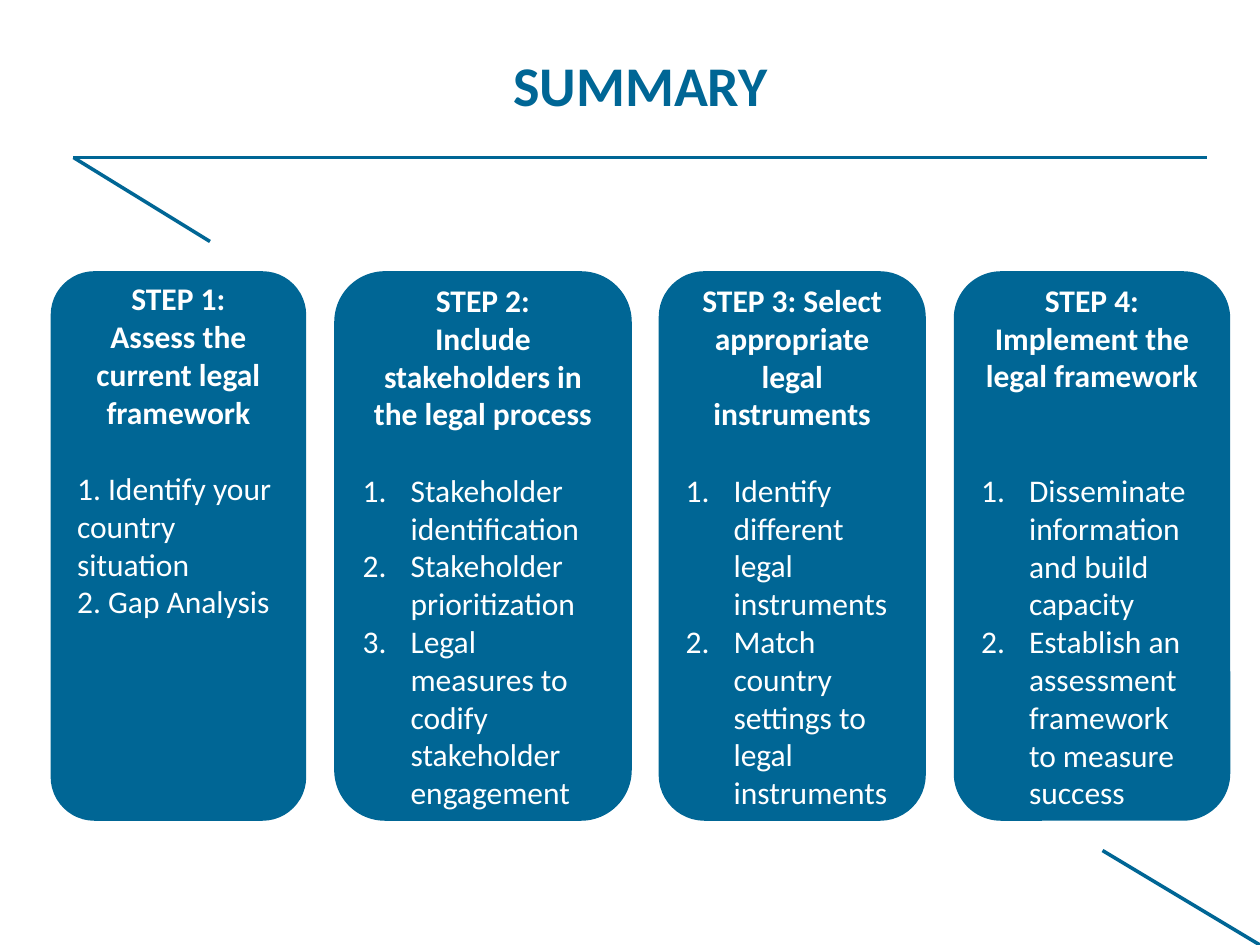
from dataclasses import dataclass

from pptx import Presentation, util as u
from pptx.dml.color import RGBColor
from pptx.enum import shapes, text
from pptx.oxml.ns import qn

COLUMNS, ROWS = 120, 90
SLIDE_WIDTH, SLIDE_HEIGHT = u.Inches(10), u.Inches(7.5)
FONT = "Calibri"
BLUE, WHITE = "006695", "FFFFFF"
STEP_SIZE = 18
LINE_HEIGHT = 1.22 * STEP_SIZE
LIST_INDENT = u.Inches(0.38)
CARD_TOP, CARD_ROWS = 26, 52


@dataclass
class Step:
    left: float
    columns: float
    heading: list[str]
    tasks: list[str]
    gap_lines: int = 1
    free_lines: int = 0
    numbered: bool = True


STEPS = [
    Step(5, 24, ["STEP 1:", "Assess the current legal framework"],
         ["1. Identify your country situation", "2. Gap Analysis"],
         free_lines=5, numbered=False),
    Step(32, 28, ["STEP 2:", "Include stakeholders in the legal process"],
         ["Stakeholder identification", "Stakeholder prioritization",
          "Legal measures to codify stakeholder engagement"]),
    Step(62.9, 25.1, ["STEP 3: Select appropriate legal instruments"],
         ["Identify different legal instruments",
          "Match country settings to legal instruments"]),
    Step(91, 26, ["STEP 4: Implement the legal framework"],
         ["Disseminate information and build capacity",
          "Establish an assessment framework to measure success"],
         gap_lines=2),
]
RULES = [
    ((105, 81), (120, 90)),
    ((7, 15), (115, 15)),
    ((7, 15), (20, 23)),
]


def color(value: str) -> RGBColor:
    return RGBColor.from_string(value)


def x(column: float) -> int:
    return round(SLIDE_WIDTH * column / COLUMNS)


def y(row: float) -> int:
    return round(SLIDE_HEIGHT * row / ROWS)


def style(paragraph, size: float, ink: str, bold: bool, align) -> None:
    paragraph.alignment = align
    font = paragraph.font
    font.name, font.size, font.bold = FONT, u.Pt(size), bold
    font.color.rgb = color(ink)


def number(paragraph) -> None:
    """Give the paragraph an automatic number and a hanging indent."""
    properties = paragraph._p.get_or_add_pPr()
    properties.set("marL", str(LIST_INDENT))
    properties.set("indent", str(-LIST_INDENT))
    bullet = properties.makeelement(qn("a:buAutoNum"), {"type": "arabicPeriod"})
    properties.append(bullet)


def draw_rule(slide, start: tuple, end: tuple) -> None:
    rule = slide.shapes.add_connector(
        shapes.MSO_CONNECTOR.STRAIGHT,
        x(start[0]), y(start[1]), x(end[0]), y(end[1]))
    rule.line.color.rgb = color(BLUE)
    rule.line.width = u.Pt(2)
    properties = rule._element.spPr
    properties.append(properties.makeelement(qn("a:effectLst"), {}))


def draw_title(slide, wording: str) -> None:
    frame = slide.shapes.add_textbox(x(7), y(2), x(108), y(12)).text_frame
    frame.word_wrap = True
    frame.vertical_anchor = text.MSO_ANCHOR.MIDDLE
    frame.text = wording
    style(frame.paragraphs[0], 32, BLUE, True, text.PP_ALIGN.CENTER)


def draw_step(slide, step: Step) -> None:
    card = slide.shapes.add_shape(
        shapes.MSO_SHAPE.ROUNDED_RECTANGLE,
        x(step.left), y(CARD_TOP), x(step.columns), y(CARD_ROWS))
    card.shadow.inherit = False
    card.fill.solid()
    card.fill.fore_color.rgb = card.line.color.rgb = color(BLUE)
    card.line.width = u.Pt(2)

    frame = card.text_frame
    frame.word_wrap = True
    frame.vertical_anchor = text.MSO_ANCHOR.MIDDLE
    frame.margin_bottom = u.Inches(0.05) + u.Pt(step.free_lines * LINE_HEIGHT)
    frame.text = "\n".join(step.heading + step.tasks)
    headings = frame.paragraphs[:len(step.heading)]
    tasks = frame.paragraphs[len(step.heading):]
    for heading in headings:
        style(heading, STEP_SIZE, WHITE, True, text.PP_ALIGN.CENTER)
    tasks[0].space_before = u.Pt(step.gap_lines * LINE_HEIGHT)
    for task in tasks:
        if step.numbered:
            number(task)
        style(task, STEP_SIZE, WHITE, False, text.PP_ALIGN.LEFT)


def main() -> None:
    deck = Presentation()
    deck.slide_width, deck.slide_height = SLIDE_WIDTH, SLIDE_HEIGHT
    slide = deck.slides.add_slide(deck.slide_layouts[6])
    for start, end in RULES:
        draw_rule(slide, start, end)
    draw_title(slide, "SUMMARY")
    for step in STEPS:
        draw_step(slide, step)
    deck.save("out.pptx")


if __name__ == "__main__":
    main()
